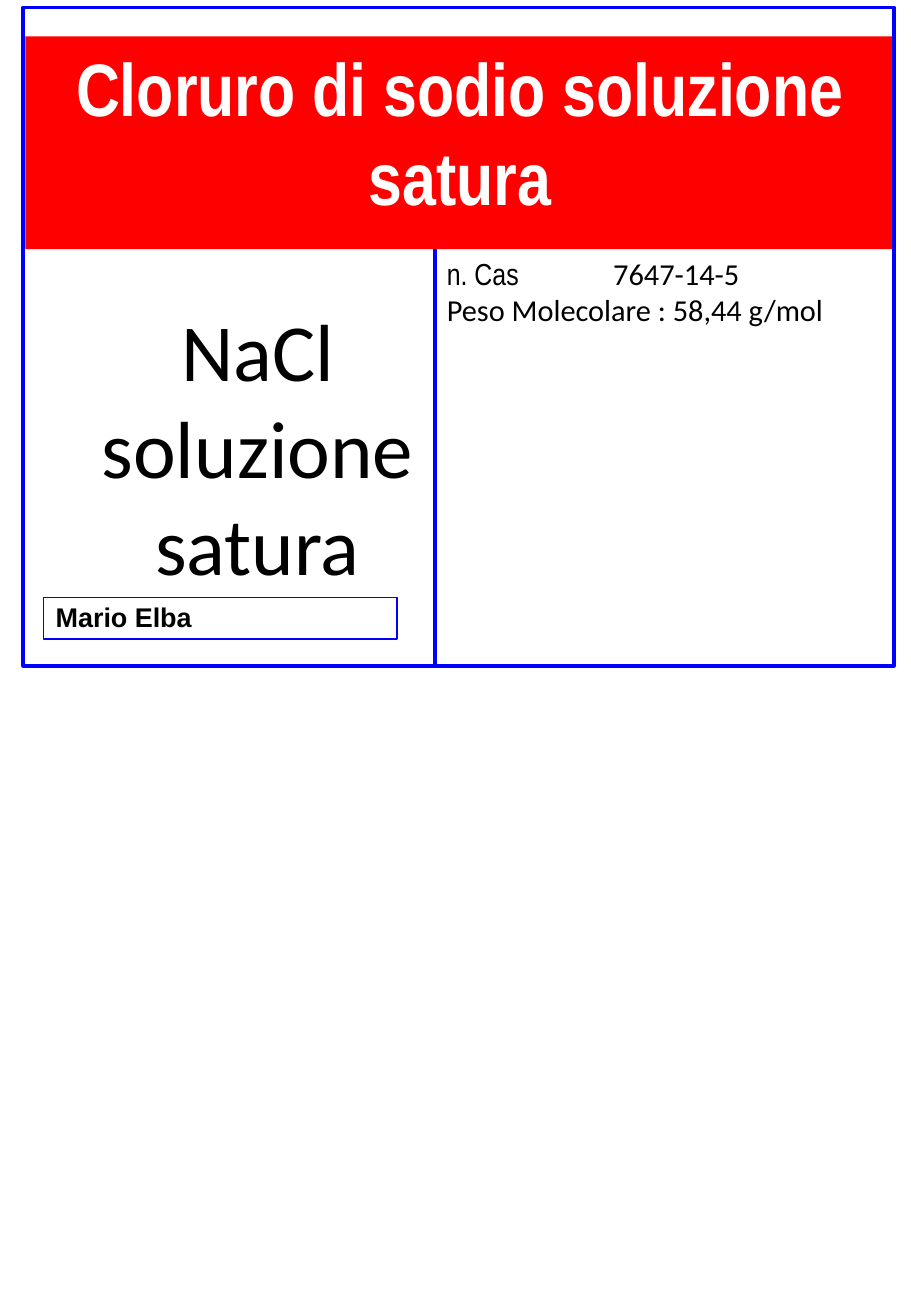
from lxml.etree import SubElement
from pptx import Presentation
from pptx.dml.color import RGBColor
from pptx.enum.shapes import MSO_CONNECTOR, MSO_SHAPE
from pptx.enum.text import MSO_ANCHOR, MSO_AUTO_SIZE, PP_ALIGN
from pptx.oxml.ns import qn
from pptx.util import Inches, Pt

COLORS = {"red": "FF0000", "blue": "0000FF", "black": "000000", "white": "FFFFFF"}


def rgb(name):
    """Return the named colour."""
    return RGBColor.from_string(COLORS[name])


def place(sp, x, y, w, h):
    """Move and size a shape, in inches."""
    sp.left, sp.top, sp.width, sp.height = (Inches(v) for v in (x, y, w, h))


def prepare_frame(sp, auto_size=MSO_AUTO_SIZE.NONE):
    """Set a wrapping, top-anchored text frame and return it."""
    tf = sp.text_frame
    tf.word_wrap = True
    tf.auto_size = auto_size
    tf.vertical_anchor = MSO_ANCHOR.TOP
    return tf


def add_run(p, text, size, font, color="black", bold=False):
    """Append a formatted run to a paragraph."""
    r = p.add_run()
    r.text = text
    r.font.size = Pt(size)
    r.font.name = font
    r.font.bold = bold
    r.font.color.rgb = rgb(color)


def add_frame(s, x, y, w, h, weight):
    """Add an unfilled rectangle with a blue outline."""
    sp = s.shapes.add_shape(MSO_SHAPE.RECTANGLE, Inches(x), Inches(y), Inches(w), Inches(h))
    sp.shadow.inherit = False
    sp.fill.background()
    sp.line.color.rgb = rgb("blue")
    sp.line.width = Pt(weight)
    return sp


def add_title(s, x, y, w, h):
    """Turn the title placeholder into the red banner."""
    sp = s.shapes.title
    place(sp, x, y, w, h)
    sp.fill.solid()
    sp.fill.fore_color.rgb = rgb("red")
    p = prepare_frame(sp).paragraphs[0]
    p.alignment = PP_ALIGN.CENTER
    add_run(p, "Cloruro di sodio soluzione satura", 44, "Arial Narrow", "white", True)


def add_formula(s, x, y, w, h):
    """Add the large formula and the supplier box beneath it."""
    sp = s.shapes.add_textbox(Inches(x), Inches(y), Inches(w), Inches(h))
    p = prepare_frame(sp, MSO_AUTO_SIZE.SHAPE_TO_FIT_TEXT).paragraphs[0]
    p.alignment = PP_ALIGN.CENTER
    add_run(p, "NaCl soluzione satura", 48, "Calibri")
    supplier = add_frame(s, x + 0.17, y + h - 0.02, 2.91, 0.34, 0.75)
    p = prepare_frame(supplier).paragraphs[0]
    p.alignment = PP_ALIGN.LEFT
    p.line_spacing = 0.9
    add_run(p, "Mario Elba", 16, "Arial", bold=True)


def add_properties(s, x, y, w, h):
    """Add the CAS number and the molecular weight."""
    sp = s.shapes.add_textbox(Inches(x), Inches(y), Inches(w), Inches(h))
    tf = prepare_frame(sp, MSO_AUTO_SIZE.SHAPE_TO_FIT_TEXT)
    p = tf.paragraphs[0]
    tabs = SubElement(p._p.get_or_add_pPr(), qn("a:tabLst"))
    SubElement(tabs, qn("a:tab"), pos=str(Inches(1.37)), algn="l")
    add_run(p, "n. Cas\t", 18, "Arial Narrow")
    add_run(p, "7647-14-5", 18, "Calibri")
    add_run(tf.add_paragraph(), "Peso Molecolare : 58,44 g/mol", 18, "Calibri")


def add_divider(s, x, top, bottom):
    """Add the vertical line between the two halves."""
    line = s.shapes.add_connector(
        MSO_CONNECTOR.STRAIGHT, Inches(x), Inches(top), Inches(x), Inches(bottom))
    line.line.color.rgb = rgb("blue")
    line.line.width = Pt(2)
    SubElement(line._element.spPr, qn("a:effectLst"))


def add_label(s, x, y, w, h):
    """Lay out the whole reagent label in its box."""
    middle, body_top = x + 3.39, y + 1.99
    add_title(s, x + 0.02, y + 0.24, w - 0.01, body_top - y - 0.24)
    add_formula(s, x, body_top + 0.37, 3.86, 2.52)
    add_divider(s, middle, body_top, y + h)
    add_frame(s, x, y, w, h, 2)
    add_properties(s, middle, body_top, 3.92, 0.71)


def main():
    """Build and save the label."""
    prs = Presentation()
    prs.slide_width, prs.slide_height = Inches(7.5), Inches(10.83)
    s = prs.slides.add_slide(prs.slide_layouts[5])
    add_label(s, 0.19, 0.06, 7.17, 5.42)
    prs.save("out.pptx")


if __name__ == "__main__":
    main()
